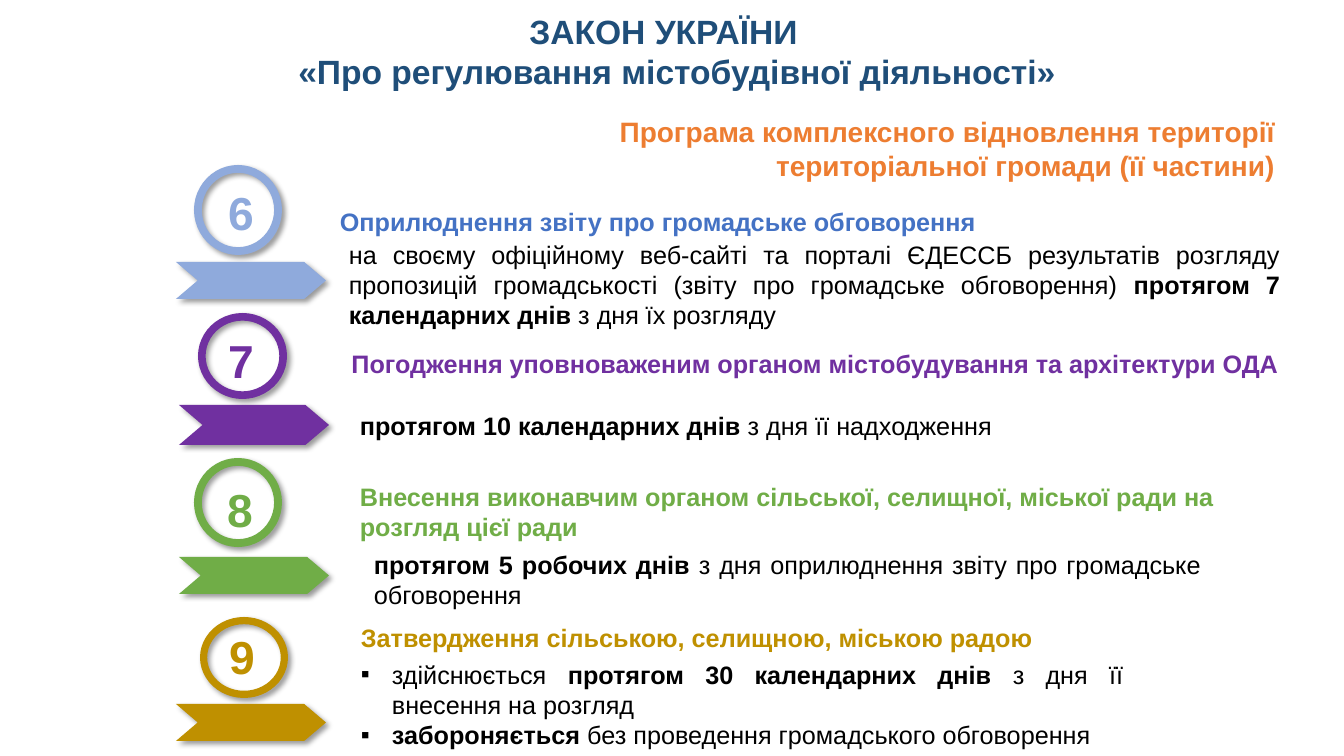
"""Build the slide on steps 6 to 9 of the territory restoration programme."""
from lxml import etree
from pptx import Presentation
from pptx import util as u
from pptx.dml.color import RGBColor
from pptx.enum import shapes, text
from pptx.oxml import ns

WHITE = RGBColor(0xFF, 0xFF, 0xFF)
BLACK = RGBColor(0x00, 0x00, 0x00)
NAVY = RGBColor(0x1F, 0x4E, 0x79)
ORANGE = RGBColor(0xED, 0x7D, 0x31)
PALE_BLUE = RGBColor(0x8F, 0xAA, 0xDC)
BLUE = RGBColor(0x44, 0x72, 0xC4)
PURPLE = RGBColor(0x70, 0x30, 0xA0)
GREEN = RGBColor(0x70, 0xAD, 0x47)
GOLD = RGBColor(0xBF, 0x90, 0x00)

LEFT = text.PP_ALIGN.LEFT
CENTER = text.PP_ALIGN.CENTER
RIGHT = text.PP_ALIGN.RIGHT
JUSTIFY = text.PP_ALIGN.JUSTIFY
PX = 914400 / 100.8
TITLE_SHIFT = 27
BULLET_INDENT = 31

STEPS = [
    ("6", PALE_BLUE, (194, 165, 88, 90), (219, 179, 39, 66), (176, 262, 150, 37)),
    ("7", PURPLE, (198, 313, 89, 86), (219, 327, 42, 66), (179, 405, 150, 40)),
    ("8", GREEN, (194, 458, 88, 89), (194, 476, 93, 66), (179, 557, 150, 37)),
    ("9", GOLD, (200, 617, 88, 81), (194, 623, 97, 66), (176, 704, 150, 37)),
]

HEADINGS = [
    ("Оприлюднення звіту про громадське обговорення", BLUE, LEFT, (330, 201, 808, 40)),
    ("Погодження уповноваженим органом містобудування та архітектури ОДА",
     PURPLE, CENTER, (336, 343, 958, 40)),
    ("Внесення виконавчим органом сільської, селищної, міської ради на розгляд цієї ради",
     GREEN, LEFT, (350, 476, 930, 72)),
    ("Затвердження сільською, селищною, міською радою", GOLD, LEFT, (351, 617, 742, 40)),
]

DETAILS = [
    ([[("на своєму офіційному веб-сайті та порталі ЄДЕССБ результатів розгляду пропозицій "
        "громадськості (звіту про громадське обговорення) ", False),
       ("протягом 7 календарних днів ", True), ("з дня їх розгляду", False)]],
     JUSTIFY, (339, 234, 951, 102), False),
    ([[("протягом 10 календарних днів ", True), ("з дня її надходження", False)]],
     LEFT, (350, 405, 920, 40), False),
    ([[("протягом 5 робочих днів ", True),
       ("з дня оприлюднення звіту про громадське обговорення", False)]],
     JUSTIFY, (364, 544, 847, 72), False),
    ([[("здійснюється ", False), ("протягом 30 календарних днів ", True),
       ("з дня її внесення на розгляд", False)],
      [("забороняється", True), (" без проведення громадського обговорення", False)]],
     JUSTIFY, (351, 654, 782, 102), True),
]


def emu(pixels):
    """Turn pixels into EMU."""
    return u.Emu(round(pixels * PX))


def indent(paragraph, left, first=0):
    """Set the left margin and first-line indent of a paragraph."""
    properties = paragraph._p.get_or_add_pPr()
    properties.set("marL", str(emu(left)))
    properties.set("indent", str(emu(first)))
    return properties


def add_bullet(paragraph):
    """Give a paragraph a square bullet with a hanging indent."""
    properties = indent(paragraph, BULLET_INDENT, -BULLET_INDENT)
    etree.SubElement(properties, ns.qn("a:buFont")).set("typeface", "Arial")
    etree.SubElement(properties, ns.qn("a:buChar")).set("char", "▪")


def write(frame, paragraphs, size, color, align, bulleted=False):
    """Fill a text frame with paragraphs made of (words, bold) runs."""
    frame.word_wrap = True
    frame.auto_size = text.MSO_AUTO_SIZE.SHAPE_TO_FIT_TEXT
    for number, pieces in enumerate(paragraphs):
        paragraph = frame.add_paragraph() if number else frame.paragraphs[0]
        paragraph.alignment = align
        if bulleted:
            add_bullet(paragraph)
        for words, bold in pieces:
            run = paragraph.add_run()
            run.text = words
            run.font.name = "Arial"
            run.font.size = u.Pt(size)
            run.font.bold = bold
            run.font.color.rgb = color


def add_text(slide, box, paragraphs, size, color, align, bulleted=False):
    """Add a text box."""
    shape = slide.shapes.add_textbox(*map(emu, box))
    write(shape.text_frame, paragraphs, size, color, align, bulleted)


def add_filled(slide, kind, box, color):
    """Add a preset shape without outline or shadow."""
    shape = slide.shapes.add_shape(kind, *map(emu, box))
    shape.shadow.inherit = False
    shape.fill.solid()
    shape.fill.fore_color.rgb = color
    shape.line.fill.background()
    return shape


def add_raised(slide, kind, box, color, adjustment):
    """Add an adjusted preset shape with a soft shadow."""
    shape = add_filled(slide, kind, box, color)
    shape.adjustments[0] = adjustment
    effects = shape._element.spPr.find(ns.qn("a:effectLst"))
    shadow = etree.SubElement(effects, ns.qn("a:outerShdw"), blurRad=str(u.Pt(4)),
                              dist=str(u.Pt(3)), dir="2700000", algn="tl", rotWithShape="0")
    tint = etree.SubElement(shadow, ns.qn("a:srgbClr"), val=str(BLACK))
    etree.SubElement(tint, ns.qn("a:alpha"), val="40000")


def add_step(slide, number, color, ring, label, arrow):
    """Add a numbered ring and the arrow under it."""
    add_raised(slide, shapes.MSO_SHAPE.DONUT, ring, color, 0.089)
    add_raised(slide, shapes.MSO_SHAPE.CHEVRON, arrow, color, 0.589)
    add_text(slide, label, [[(number, True)]], 33, color, CENTER)


def add_title(slide):
    """Add the title with its second line shifted right."""
    title = add_filled(slide, shapes.MSO_SHAPE.RECTANGLE, (18, 5, 1291, 92), WHITE)
    lines = [[("ЗАКОН УКРАЇНИ", True)],
             [("«Про регулювання містобудівної діяльності»", True)]]
    write(title.text_frame, lines, 24, NAVY, CENTER)
    indent(title.text_frame.paragraphs[1], TITLE_SHIFT)


def main():
    """Build and save the presentation."""
    presentation = Presentation()
    presentation.slide_width = emu(1344)
    presentation.slide_height = emu(756)
    slide = presentation.slides.add_slide(presentation.slide_layouts[6])
    add_title(slide)
    programme = [[("Програма комплексного відновлення території", True)],
                 [("територіальної громади (її частини)", True)]]
    add_text(slide, (87, 110, 1198, 78), programme, 20, ORANGE, RIGHT)
    for step in STEPS:
        add_step(slide, *step)
    for heading, color, align, box in HEADINGS:
        add_text(slide, box, [[(heading, True)]], 18, color, align)
    for paragraphs, align, box, bulleted in DETAILS:
        add_text(slide, box, paragraphs, 18, BLACK, align, bulleted)
    presentation.save("out.pptx")


if __name__ == "__main__":
    main()
